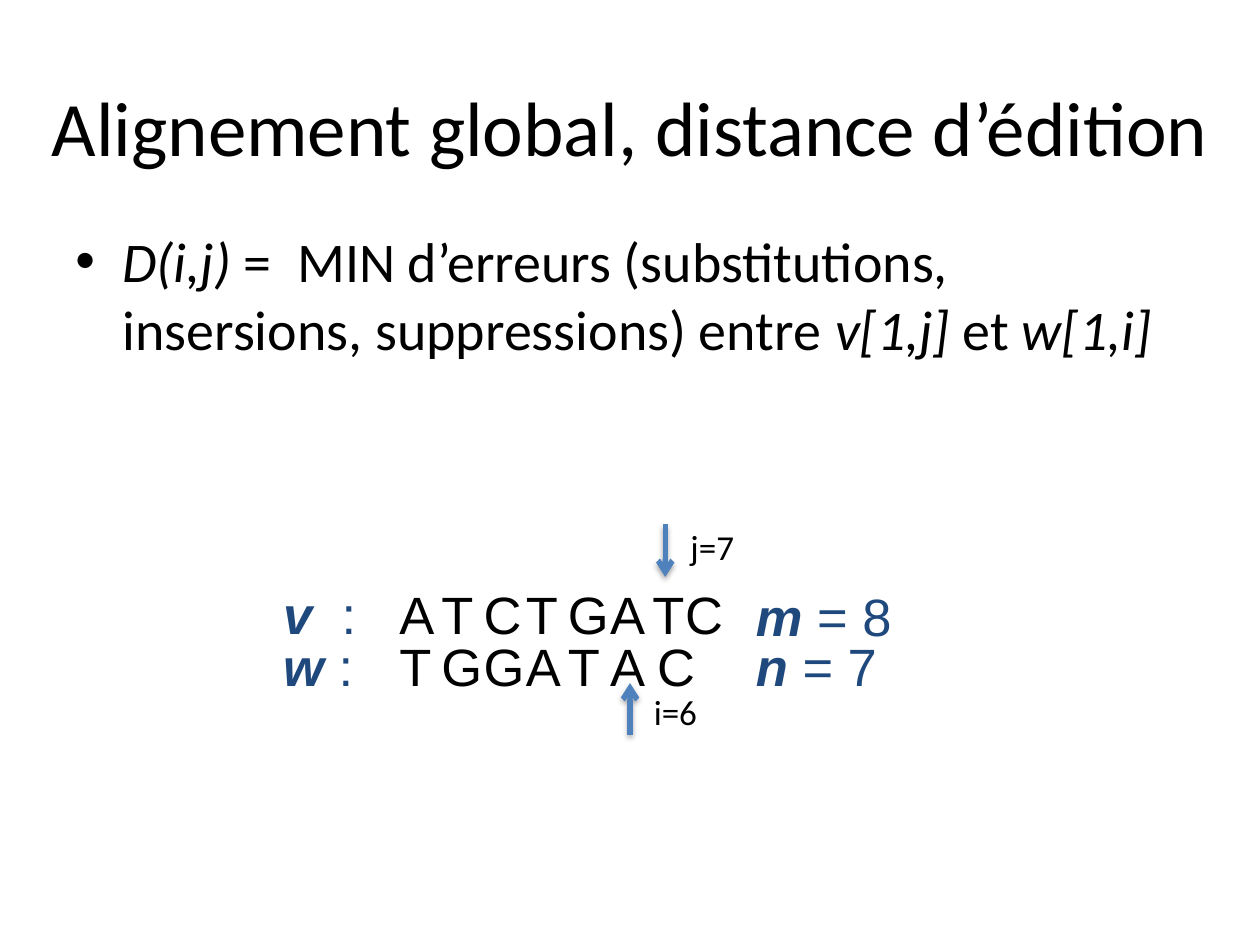
from dataclasses import dataclass

from lxml import etree
from pptx import Presentation
from pptx.dml.color import RGBColor
from pptx.enum.shapes import MSO_CONNECTOR
from pptx.enum.text import MSO_AUTO_SIZE, PP_ALIGN
from pptx.oxml import parse_xml
from pptx.oxml.ns import nsdecls, qn
from pptx.util import Cm, Pt

STRAIGHT = MSO_CONNECTOR.STRAIGHT
CENTER, LEFT = PP_ALIGN.CENTER, PP_ALIGN.LEFT
GROW, FIXED = MSO_AUTO_SIZE.SHAPE_TO_FIT_TEXT, MSO_AUTO_SIZE.NONE


@dataclass(frozen=True)
class Theme:
    black: RGBColor = RGBColor(0x00, 0x00, 0x00)
    navy: RGBColor = RGBColor(0x1F, 0x49, 0x7D)
    blue: RGBColor = RGBColor(0x4F, 0x81, 0xBD)
    text_font: str = "Calibri"
    sequence_font: str = "Arial"
    title: int = 44
    body: int = 32
    sequence: int = 30
    index: int = 20
    arrow: int = 3


THEME = Theme()

# Sequence grid, in cm
LETTER_LEFT, LETTER_STEP = 7.8, 0.85
LABEL_LEFT, LENGTH_LEFT = 5.46, 14.99
V_TOP, W_TOP, ROW_HEIGHT = 11.61, 12.65, 1.52


def add_text(shapes, box, runs, size, font=THEME.text_font, color=THEME.black,
             align=LEFT, wrap=True, auto_size=GROW):
    """Add one paragraph; runs are (text, italic, bold)."""
    sp = shapes.add_textbox(*(Cm(v) for v in box))
    tf = sp.text_frame
    tf.word_wrap = wrap
    tf.auto_size = auto_size
    p = tf.paragraphs[0]
    p.alignment = align
    for text, italic, bold in runs:
        r = p.add_run()
        r.text = text
        r.font.name, r.font.size = font, Pt(size)
        r.font.color.rgb = color
        r.font.italic, r.font.bold = italic, bold
    return sp


def add_bullet(p, indent):
    pPr = p._p.get_or_add_pPr()
    pPr.set("marL", str(indent))
    pPr.set("indent", str(-indent))
    etree.SubElement(pPr, qn("a:buFont"), typeface="Arial")
    etree.SubElement(pPr, qn("a:buChar"), char="•")


def add_letters(s, top, letters, last_left):
    """Group one sequence on the grid; its last letter sits off the grid."""
    group = s.shapes.add_group_shape()
    lefts = [LETTER_LEFT + i * LETTER_STEP for i in range(len(letters) - 1)]
    for letter, left in zip(letters, lefts + [last_left]):
        add_text(group.shapes, (left, top, LETTER_STEP, ROW_HEIGHT),
                 [(letter, False, False)], THEME.sequence, THEME.sequence_font)


def add_variable(s, left, top, width, name, rest):
    add_text(s.shapes, (left, top, width, ROW_HEIGHT),
             [(name, True, True), (rest, False, False)],
             THEME.sequence, THEME.sequence_font, THEME.navy)


def add_arrow(s, x, start, end):
    line = s.shapes.add_connector(STRAIGHT, Cm(x), Cm(start), Cm(x), Cm(end))
    line.line.color.rgb = THEME.blue
    line.line.width = Pt(THEME.arrow)
    etree.SubElement(line.line._get_or_add_ln(), qn("a:tailEnd"), type="arrow")
    line._element.spPr.append(parse_xml(
        f'<a:effectLst {nsdecls("a")}>'
        f'<a:outerShdw blurRad="{Pt(3.1)}" dist="{Pt(1.8)}" dir="5400000" rotWithShape="0">'
        '<a:srgbClr val="000000"><a:alpha val="35000"/></a:srgbClr>'
        '</a:outerShdw></a:effectLst>'))


def main():
    prs = Presentation()
    prs.slide_width, prs.slide_height = Cm(25.4), Cm(19.05)
    s = prs.slides.add_slide(prs.slide_layouts[6])

    # Title and definition
    add_text(s.shapes, (0.71, 1.47, 24, 2.13),
             [("Alignement global, distance d’édition", False, False)],
             THEME.title, align=CENTER)
    body = add_text(s.shapes, (1.27, 4.45, 22.86, 12.57), [
        ("D(i,j) ", True, False),
        ("=  MIN d’erreurs (substitutions, insersions, suppressions) entre ", False, False),
        ("v[1,j] ", True, False),
        ("et ", False, False),
        ("w[1,i]", True, False),
    ], THEME.body, auto_size=FIXED)
    add_bullet(body.text_frame.paragraphs[0], Cm(0.95))

    # Sequences with their names and lengths
    add_letters(s, V_TOP, "ATCTGATC", 13.56)
    add_letters(s, W_TOP, "TGGATAC", 13)
    add_variable(s, LABEL_LEFT, V_TOP, 2.11, "v  ", ":")
    add_variable(s, LABEL_LEFT, W_TOP, 2.34, "w ", ":")
    add_variable(s, LENGTH_LEFT, V_TOP + 0.03, 4.24, "m", " = 8")
    add_variable(s, LENGTH_LEFT, W_TOP, 3.61, "n", " = 7")

    # Current positions
    for text, left, top in (("i=6", 12.93, 13.79), ("j=7", 13.67, 10.46)):
        add_text(s.shapes, (left, top, 1.4, 1.12), [(text, False, False)],
                 THEME.index, wrap=False)
    add_arrow(s, 13.41, 10.57, 11.63)
    add_arrow(s, 12.7, 14.81, 13.77)

    prs.save("out.pptx")


if __name__ == "__main__":
    main()
